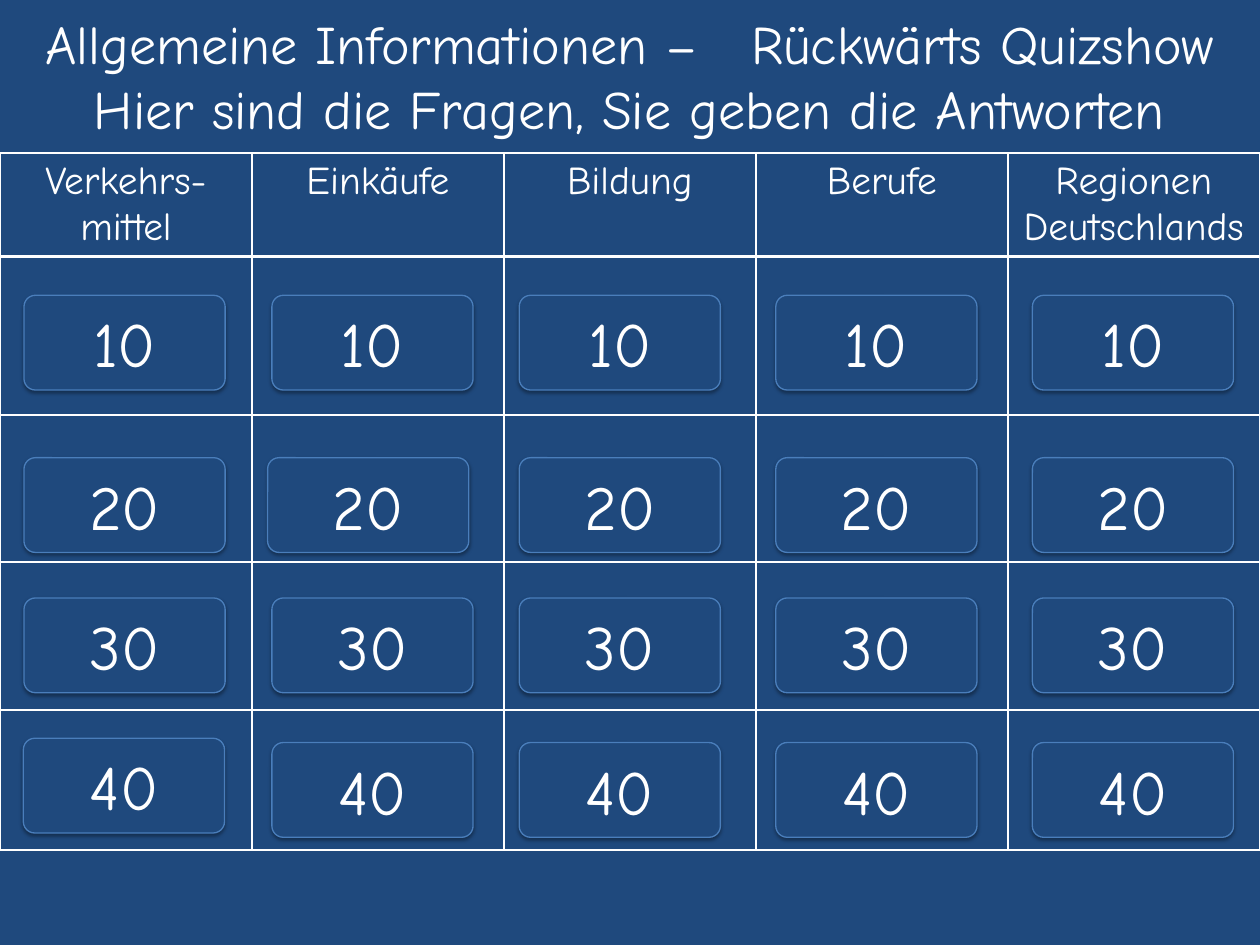
import lxml.etree
import pptx
import pptx.dml.color
import pptx.enum.shapes
import pptx.enum.text
import pptx.oxml
import pptx.oxml.ns
import pptx.util

Pt = pptx.util.Pt
NAVY = pptx.dml.color.RGBColor(0x1F, 0x49, 0x7D)
WHITE = pptx.dml.color.RGBColor(0xFF, 0xFF, 0xFF)
BLUE = pptx.dml.color.RGBColor(0x4A, 0x7E, 0xBB)
BLACK = pptx.dml.color.RGBColor(0, 0, 0)

SLIDE_WIDTH, SLIDE_HEIGHT = 1024, 768
BOARD_TOP = 124.5
ROW_HEIGHTS = [84, 128.5, 120, 120, 114]
CATEGORIES = ["Verkehrs-mittel", "Einkäufe", "Bildung", "Berufe", "Regionen Deutschlands"]
COLUMN_LEFTS = [19.5, 221, 422, 630.5, 839]
POINT_TOPS = {"10": 240, "20": 372, "30": 486, "40": 603.5}
MOVED_BUTTONS = {("20", 1): (217.5, 372), ("40", 0): (19, 600)}
BUTTON_SIZE = (163.5, 77)
HEADLINE = [
    ["Allgemeine Informationen –", " ", "Rückwärts Quizshow"],
    ["Hier sind die Fragen, Sie geben die Antworten"],
]
GAP_SPACING = 28


class Board:
    font_name = "Comic Neue"
    namespace = pptx.oxml.ns.nsdecls("a")

    def __init__(self, slide):
        self.slide = slide
        slide.background.fill.solid()
        slide.background.fill.fore_color.rgb = NAVY

    def style_text(self, frame, size, margins):
        frame.margin_left = frame.margin_right = Pt(margins[0])
        frame.margin_top = frame.margin_bottom = Pt(margins[1])
        for paragraph in frame.paragraphs:
            paragraph.alignment = pptx.enum.text.PP_ALIGN.CENTER
            for run in paragraph.runs:
                run.font.name = self.font_name
                run.font.size = Pt(size)
                run.font.bold = False
                run.font.color.rgb = WHITE

    def headline(self, lines, top, height):
        title = self.slide.shapes.title
        title.left, title.top = Pt(0), Pt(top)
        title.width, title.height = Pt(SLIDE_WIDTH), Pt(height)
        frame = title.text_frame
        frame.word_wrap = True
        frame.auto_size = pptx.enum.text.MSO_AUTO_SIZE.NONE
        frame.vertical_anchor = pptx.enum.text.MSO_ANCHOR.TOP
        for number, pieces in enumerate(lines):
            line = frame.add_paragraph() if number else frame.paragraphs[0]
            for piece in pieces:
                line.add_run().text = piece
        self.style_text(frame, 44, (10, 5.5))
        for line in frame.paragraphs:
            for run in line.runs:
                if run.text == " ":
                    run.font._element.set("spc", str(GAP_SPACING * 100))

    def cell_borders(self, cell):
        properties = cell._tc.get_or_add_tcPr()
        for position, side in enumerate("LRTB"):
            properties.insert(position, pptx.oxml.parse_xml(
                f'<a:ln{side} {self.namespace} w="{Pt(2.13)}"><a:solidFill>'
                f'<a:srgbClr val="{WHITE}"/></a:solidFill></a:ln{side}>'))

    def category_table(self, categories, top, row_heights):
        table = self.slide.shapes.add_table(
            len(row_heights), len(categories), Pt(0), Pt(top),
            Pt(SLIDE_WIDTH), Pt(sum(row_heights))).table
        for column in table.columns:
            column.width = Pt(SLIDE_WIDTH / len(categories))
        for row, height in zip(table.rows, row_heights):
            row.height = Pt(height)
        for cell, category in zip(table.rows[0].cells, categories):
            cell.text_frame.text = category
        for cell in table.iter_cells():
            cell.fill.solid()
            cell.fill.fore_color.rgb = NAVY
            cell.margin_left = cell.margin_right = Pt(5)
            cell.margin_top = cell.margin_bottom = Pt(5)
            self.style_text(cell.text_frame, 32, (5, 5))
            self.cell_borders(cell)

    def soft_shadow(self, shape):
        shape.shadow.inherit = False
        effects = shape._element.spPr.find(pptx.oxml.ns.qn("a:effectLst"))
        effects.append(lxml.etree.fromstring(
            f'<a:outerShdw {self.namespace} blurRad="{Pt(3)}" dist="{Pt(1.8)}" '
            f'dir="5400000" rotWithShape="0"><a:srgbClr val="{BLACK}">'
            '<a:alpha val="35000"/></a:srgbClr></a:outerShdw>'))

    def points_button(self, points, left, top):
        width, height = BUTTON_SIZE
        button = self.slide.shapes.add_shape(
            pptx.enum.shapes.MSO_SHAPE.ROUNDED_RECTANGLE,
            Pt(left), Pt(top), Pt(width), Pt(height))
        button.adjustments[0] = 0.12
        button.fill.solid()
        button.fill.fore_color.rgb = NAVY
        button.line.color.rgb = BLUE
        button.line.width = Pt(1.07)
        self.soft_shadow(button)
        button.text_frame.text = points
        button.text_frame.vertical_anchor = pptx.enum.text.MSO_ANCHOR.MIDDLE
        self.style_text(button.text_frame, 51, (10, 5.5))


def main():
    presentation = pptx.Presentation()
    presentation.slide_width = Pt(SLIDE_WIDTH)
    presentation.slide_height = Pt(SLIDE_HEIGHT)
    board = Board(presentation.slides.add_slide(presentation.slide_layouts[5]))
    board.headline(HEADLINE, 3, 107)
    board.category_table(CATEGORIES, BOARD_TOP, ROW_HEIGHTS)
    for points, top in POINT_TOPS.items():
        for column, left in enumerate(COLUMN_LEFTS):
            board.points_button(points, *MOVED_BUTTONS.get((points, column), (left, top)))
    presentation.save("out.pptx")


if __name__ == "__main__":
    main()
